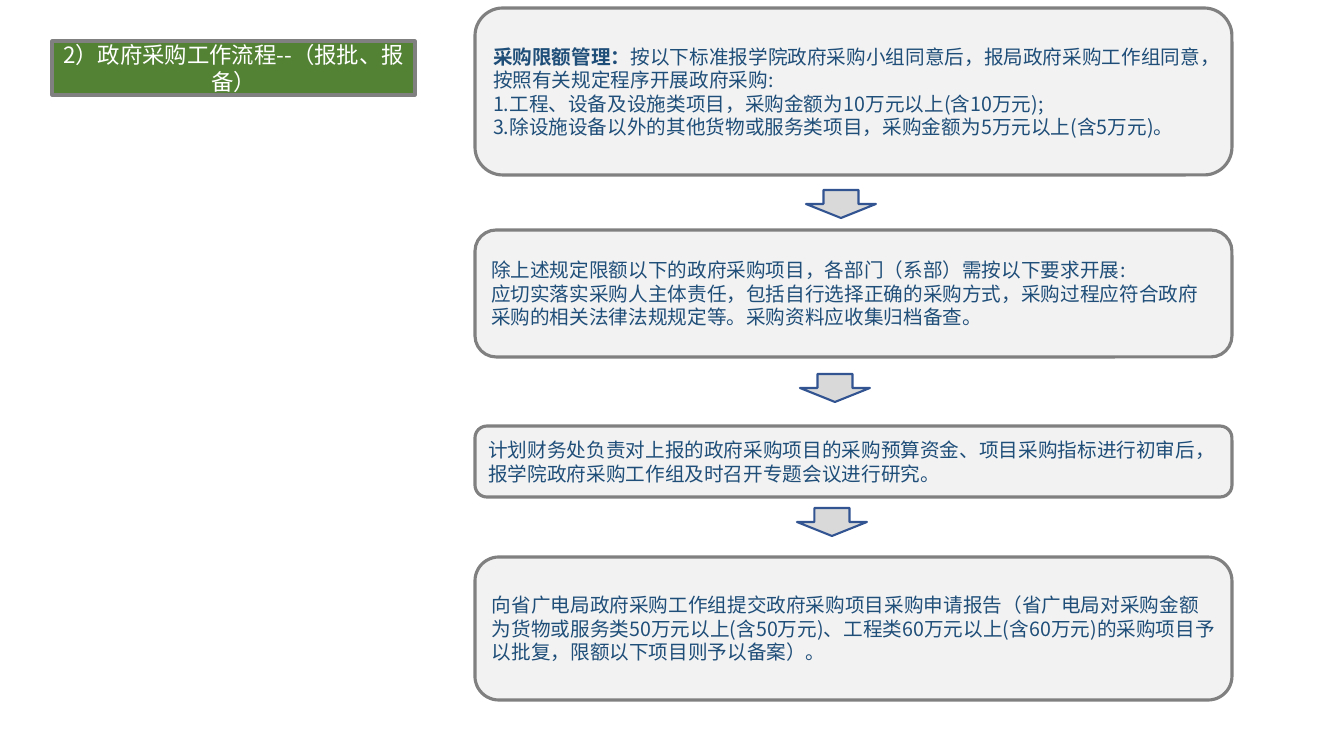
from dataclasses import dataclass

from lxml.etree import SubElement
from pptx import Presentation
from pptx.dml.color import RGBColor
from pptx.enum.shapes import MSO_SHAPE
from pptx.enum.text import MSO_ANCHOR, MSO_AUTO_SIZE, PP_ALIGN
from pptx.oxml import parse_xml
from pptx.oxml.ns import nsdecls, qn
from pptx.shapes.base import BaseShape
from pptx.slide import Slide
from pptx.text.text import TextFrame
from pptx.util import Emu, Pt

FONT = "Noto Sans CJK SC"
GREEN = RGBColor(0x54, 0x82, 0x35)
GRAY = RGBColor(0x80, 0x80, 0x80)
PALE = RGBColor(0xF2, 0xF2, 0xF2)
SILVER = RGBColor(0xD9, 0xD9, 0xD9)
BLUE = RGBColor(0x32, 0x54, 0x91)
NAVY = RGBColor(0x1F, 0x4E, 0x79)
WHITE = RGBColor(0xFF, 0xFF, 0xFF)

STEP_LEFT, STEP_WIDTH = 475, 757
ARROW_WIDTH, ARROW_HEIGHT = 70, 28


@dataclass(frozen=True)
class Run:
    text: str
    bold: bool = False


@dataclass(frozen=True)
class Step:
    top: int
    height: int
    paragraphs: list[list[Run]]


@dataclass(frozen=True)
class Arrow:
    left: int
    top: int


TITLE = [[Run("2）政府采购工作流程--（报批、报备）")]]
STEPS = [
    Step(8, 167, [
        [Run("采购限额管理：", True),
         Run("按以下标准报学院政府采购小组同意后，报局政府采购工作组同意，按照有关规定程序开展政府采购:")],
        [Run("1.工程、设备及设施类项目，采购金额为10万元以上(含10万元);")],
        [Run("3.除设施设备以外的其他货物或服务类项目，采购金额为5万元以上(含5万元)。")],
    ]),
    Step(230, 127, [
        [Run("除上述规定限额以下的政府采购项目，各部门（系部）需按以下要求开展:")],
        [Run("应切实落实采购人主体责任，包括自行选择正确的采购方式，采购过程应符合政府"
             "采购的相关法律法规规定等。采购资料应收集归档备查。")],
    ]),
    Step(426, 71, [
        [Run("计划财务处负责对上报的政府采购项目的采购预算资金、项目采购指标进行初审后，"
             "报学院政府采购工作组及时召开专题会议进行研究。")],
    ]),
    Step(557, 143, [
        [Run("向省广电局政府采购工作组提交政府采购项目采购申请报告（省广电局对采购金额"
             "为货物或服务类50万元以上(含50万元)、工程类60万元以上(含60万元)的采"
             "购项目予以批复，限额以下项目则予以备案）。")],
    ]),
]
ARROWS = [Arrow(806, 190), Arrow(800, 374), Arrow(797, 508)]


def px(length: int) -> Emu:
    return Emu(round(length * 914400 / 100.8))


def paint(shape: BaseShape, fill: RGBColor, line: RGBColor, width: float) -> None:
    shape.fill.solid()
    shape.fill.fore_color.rgb = fill
    shape.line.color.rgb = line
    shape.line.width = Pt(width)


def write(frame: TextFrame, paragraphs: list[list[Run]], size: int,
          color: RGBColor, alignment: PP_ALIGN) -> None:
    frame.word_wrap = True
    frame.auto_size = MSO_AUTO_SIZE.NONE
    frame.vertical_anchor = MSO_ANCHOR.MIDDLE
    for index, runs in enumerate(paragraphs):
        paragraph = frame.add_paragraph() if index else frame.paragraphs[0]
        paragraph.alignment = alignment
        for item in runs:
            run = paragraph.add_run()
            run.text = item.text
            run.font.name = FONT
            run.font.size = Pt(size)
            run.font.bold = item.bold
            run.font.color.rgb = color
            SubElement(run.font._element, qn("a:ea"), typeface=FONT)


def add_shape(slide: Slide, kind: MSO_SHAPE, left: int, top: int,
              width: int, height: int) -> BaseShape:
    shape = slide.shapes.add_shape(kind, px(left), px(top), px(width), px(height))
    shape.shadow.inherit = False
    return shape


def format_title(slide: Slide) -> None:
    title = slide.shapes.title
    title.left, title.top = px(52), px(41)
    title.width, title.height = px(363), px(54)
    title._element.spPr.append(parse_xml(
        f'<a:prstGeom {nsdecls("a")} prst="roundRect"><a:avLst/></a:prstGeom>'))
    paint(title, GREEN, GRAY, 2.25)
    write(title.text_frame, TITLE, 16, WHITE, PP_ALIGN.CENTER)


def add_step(slide: Slide, step: Step) -> None:
    shape = add_shape(slide, MSO_SHAPE.ROUNDED_RECTANGLE,
                      STEP_LEFT, step.top, STEP_WIDTH, step.height)
    paint(shape, PALE, GRAY, 2.25)
    write(shape.text_frame, step.paragraphs, 14, NAVY, PP_ALIGN.LEFT)


def add_arrow(slide: Slide, arrow: Arrow) -> None:
    shape = add_shape(slide, MSO_SHAPE.DOWN_ARROW,
                      arrow.left, arrow.top, ARROW_WIDTH, ARROW_HEIGHT)
    paint(shape, SILVER, BLUE, 1.5)


def main() -> None:
    presentation = Presentation()
    presentation.slide_width, presentation.slide_height = px(1344), px(756)
    slide = presentation.slides.add_slide(presentation.slide_layouts[5])
    format_title(slide)
    for step in STEPS:
        add_step(slide, step)
    for arrow in ARROWS:
        add_arrow(slide, arrow)
    presentation.save("out.pptx")


if __name__ == "__main__":
    main()
